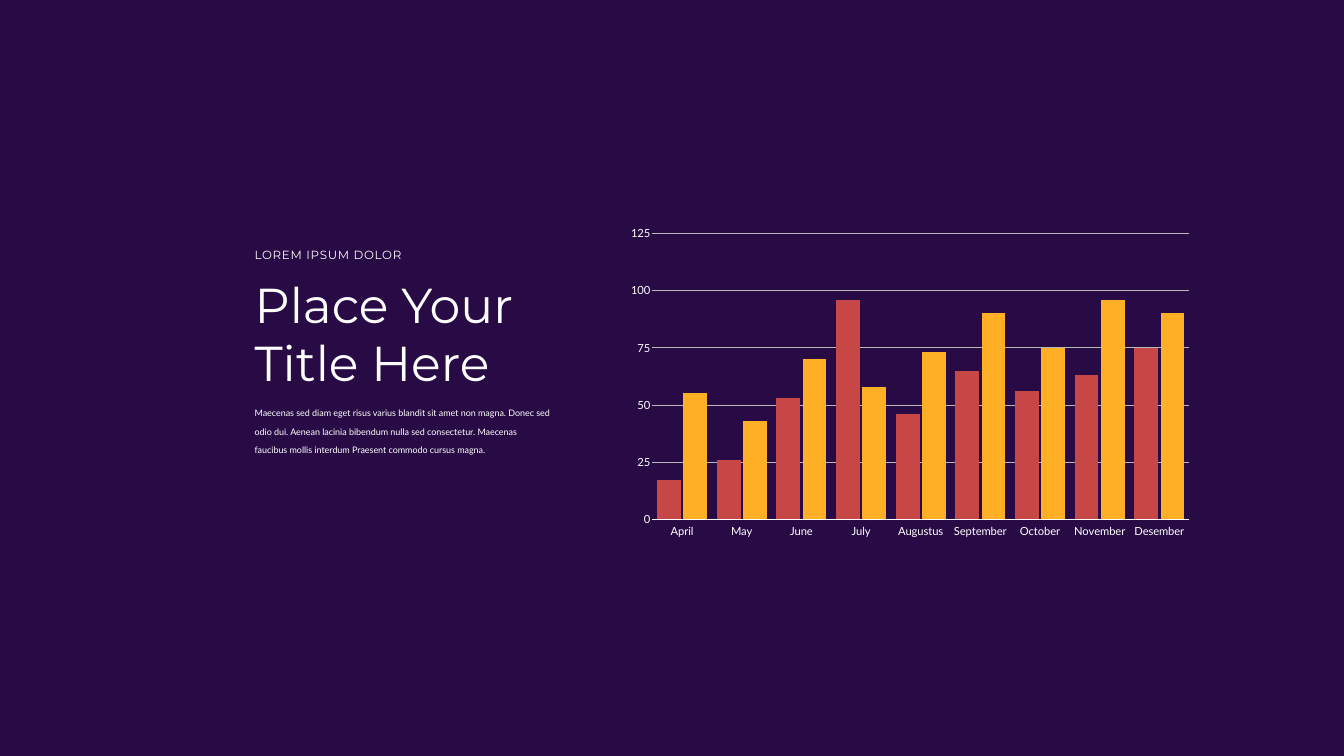
from lxml import etree
from pptx import Presentation
from pptx import util as u
from pptx.chart.data import CategoryChartData
from pptx.dml.color import RGBColor
from pptx.enum import chart as charts, text
from pptx.oxml import parse_xml
from pptx.oxml.ns import nsdecls, qn

SCALE = 9525
COLORS = {
    "night": "280B45",
    "white": "FFFFFF",
    "grid": "B8B8B8",
    "red": "C74746",
    "amber": "FFAF25",
}
MONTHS = ["April", "May", "June", "July", "Augustus",
          "September", "October", "November", "Desember"]
SERIES = [
    ("Series 1", "red", [17, 26, 53, 96, 46, 65, 56, 63, 75]),
    ("Series 2", "amber", [55, 43, 70, 58, 73, 90, 75, 96, 90]),
]
PLOT = {"x": 0.05, "y": 0.04, "w": 0.94, "h": 0.89}


def rgb(name):
    return RGBColor.from_string(COLORS[name])


class SlideBuilder:
    def __init__(self, page):
        self.page = page
        page.background.fill.solid()
        page.background.fill.fore_color.rgb = rgb("night")

    def place(self, left, top, width, height):
        return [u.Emu(v * SCALE) for v in (left, top, width, height)]

    def style(self, font, family, size):
        font.name = family
        font.size = u.Pt(size)
        font.bold = False
        font.color.rgb = rgb("white")

    def fill_text(self, box, area, words, family, size, **extras):
        box.left, box.top, box.width, box.height = self.place(*area)
        frame = box.text_frame
        frame.word_wrap = True
        frame.auto_size = text.MSO_AUTO_SIZE.NONE
        frame.vertical_anchor = text.MSO_ANCHOR.TOP
        frame.margin_left = frame.margin_right = u.Emu(6 * SCALE)
        frame.margin_top = frame.margin_bottom = u.Emu(6 * SCALE)
        frame.text = words
        para = frame.paragraphs[0]
        para.alignment = text.PP_ALIGN.LEFT
        para.space_before = u.Pt(0)
        self.style(para.font, family, size)
        props = para._p.get_or_add_pPr()
        props.set("marL", "0")
        props.set("indent", "0")
        props.insert_element_before(
            parse_xml(f"<a:buNone {nsdecls('a')}/>"), "a:tabLst", "a:defRPr")
        for key, value in extras.items():
            props.find(qn("a:defRPr")).set(key, str(value))

    def label(self, area, *content, **extras):
        box = self.page.shapes.add_textbox(*self.place(*area))
        self.fill_text(box, area, *content, **extras)

    def columns(self, area):
        data = CategoryChartData()
        data.categories = MONTHS
        for name, _, values in SERIES:
            data.add_series(name, values)
        chart = self.page.shapes.add_chart(
            charts.XL_CHART_TYPE.COLUMN_CLUSTERED, *self.place(*area), data).chart
        chart.has_legend = False
        chart.has_title = False
        self.style(chart.font, "Lato", 16)

        plot = chart.plots[0]
        plot.gap_width = 40
        plot.overlap = -10
        plot.vary_by_categories = False
        for series, (_, color, _) in zip(plot.series, SERIES):
            series.format.fill.solid()
            series.format.fill.fore_color.rgb = rgb(color)

        months, scale = chart.category_axis, chart.value_axis
        for axis in (months, scale):
            axis.major_tick_mark = charts.XL_TICK_MARK.NONE
            axis.minor_tick_mark = charts.XL_TICK_MARK.NONE
            self.style(axis.tick_labels.font, "Lato", 16)
        months.tick_label_position = charts.XL_TICK_LABEL_POSITION.LOW
        scale.minimum_scale, scale.maximum_scale, scale.major_unit = 0, 125, 25
        scale.format.line.fill.background()
        scale.has_major_gridlines = True
        for line, color in ((months.format.line, "white"),
                            (scale.major_gridlines.format.line, "grid")):
            line.color.rgb = rgb(color)
            line.width = u.Pt(1)
        self.fix_plot(chart)

    def fix_plot(self, chart):
        area = chart._chartSpace.chart.plotArea
        for old in area.findall(qn("c:layout")):
            area.remove(old)
        layout = etree.Element(qn("c:layout"))
        manual = etree.SubElement(layout, qn("c:manualLayout"))
        settings = {"layoutTarget": "inner", "xMode": "edge", "yMode": "edge", **PLOT}
        for tag, value in settings.items():
            etree.SubElement(manual, qn(f"c:{tag}")).set("val", str(value))
        area.insert(0, layout)


def main():
    deck = Presentation()
    deck.slide_width, deck.slide_height = u.Emu(2560 * SCALE), u.Emu(1440 * SCALE)
    page = deck.slides.add_slide(deck.slide_layouts[1])
    builder = SlideBuilder(page)
    builder.fill_text(
        page.placeholders[1], (479, 763, 575, 211),
        "Maecenas sed diam eget risus varius blandit sit amet non magna. "
        "Donec sed odio dui. Aenean lacinia bibendum nulla sed consectetur. "
        "Maecenas faucibus mollis interdum Praesent commodo cursus magna.",
        "Lato", 22, baseline=14000)
    builder.fill_text(page.shapes.title, (479, 516, 678, 241),
                      "Place Your Title Here", "Montserrat", 70)
    builder.label((479, 466, 630, 38), "LOREM IPSUM DOLOR",
                  "Montserrat", 16.9, spc=100)
    builder.columns((1188, 420, 1088, 612))
    deck.save("out.pptx")


if __name__ == "__main__":
    main()
